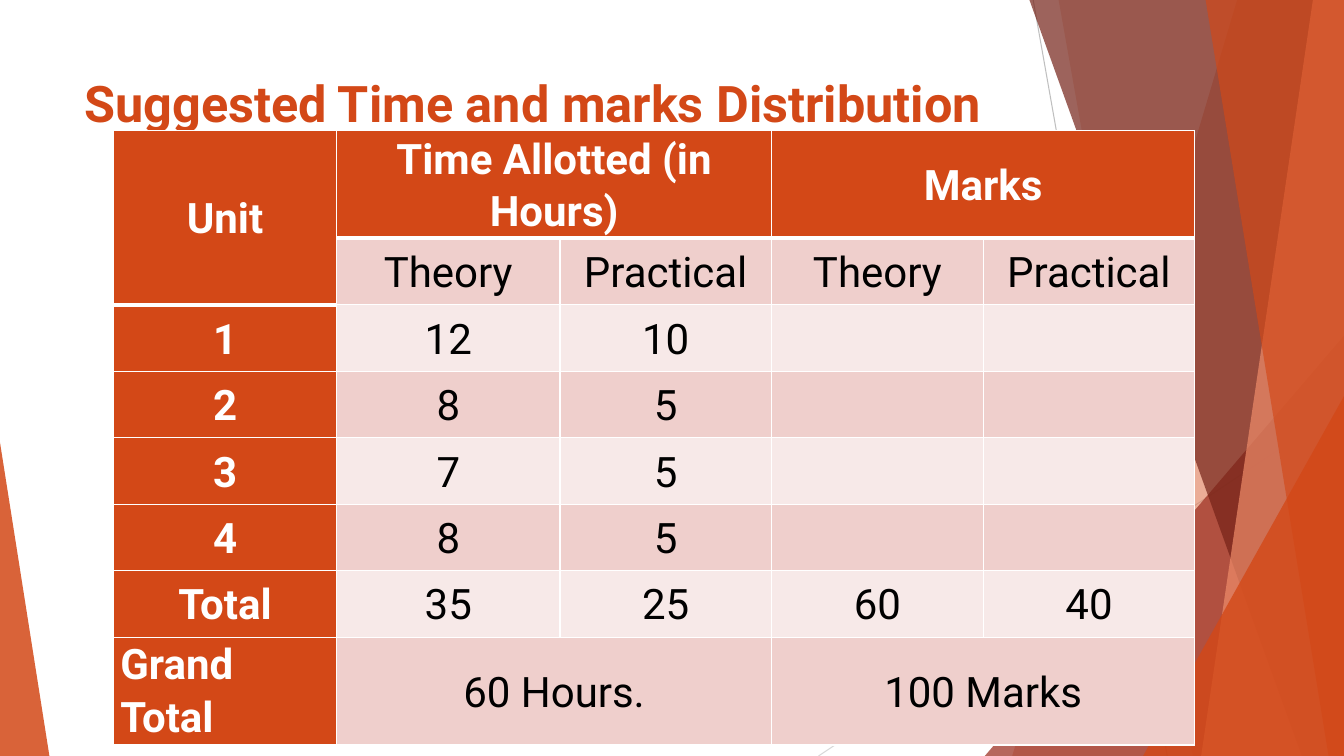
"""Build the slide with the suggested time and marks distribution table."""
from dataclasses import dataclass

from lxml import etree
from pptx import Presentation
from pptx.dml.color import RGBColor
from pptx.enum.shapes import MSO_CONNECTOR, MSO_SHAPE
from pptx.enum.text import MSO_ANCHOR, PP_ALIGN
from pptx.oxml.ns import qn
from pptx.util import Pt

STRAIGHT = MSO_CONNECTOR.STRAIGHT
TRIANGLE = MSO_SHAPE.ISOSCELES_TRIANGLE
TOP, MIDDLE = MSO_ANCHOR.TOP, MSO_ANCHOR.MIDDLE
LEFT, CENTER, JUSTIFY = PP_ALIGN.LEFT, PP_ALIGN.CENTER, PP_ALIGN.JUSTIFY


@dataclass(frozen=True)
class Theme:
    font: str = "Roboto"
    title_size: int = 36
    table_size: int = 30
    orange: str = "D34817"
    salmon: str = "EF8C6A"
    brick: str = "9B2D1F"
    maroon: str = "742217"
    band_dark: str = "EFCFCC"
    band_light: str = "F7E9E8"
    white: str = "FFFFFF"
    black: str = "000000"
    line_dark: str = "BFBFBF"
    line_light: str = "D9D9D9"


theme = Theme()
WIDTH, HEIGHT = 960, 540


def paint(shape, color, opacity):
    shape.shadow.inherit = False
    shape.line.fill.background()
    shape.fill.solid()
    shape.fill.fore_color.rgb = RGBColor.from_string(color)
    color_element = shape.fill._xPr.find(qn("a:solidFill"))[0]
    etree.SubElement(color_element, qn("a:alpha"), val=str(opacity * 1000))


def style_text(paragraph, size, color, bold, alignment):
    paragraph.alignment = alignment
    paragraph.font.name = theme.font
    paragraph.font.size = Pt(size)
    paragraph.font.bold = bold
    paragraph.font.color.rgb = RGBColor.from_string(color)


presentation = Presentation()
presentation.slide_width, presentation.slide_height = Pt(WIDTH), Pt(HEIGHT)
slide = presentation.slides.add_slide(presentation.slide_layouts[6])
shapes = slide.shapes

for start_x, start_y, end_x, color in (
    (738, 0, 833.76, theme.line_dark),
    (WIDTH, 290.16, 584.64, theme.line_light),
):
    connector = shapes.add_connector(STRAIGHT, Pt(start_x), Pt(start_y), Pt(end_x), Pt(HEIGHT))
    connector.line.color.rgb = RGBColor.from_string(color)
    connector.line.width = Pt(0.75)
    etree.SubElement(connector._element.spPr, qn("a:effectLst"))

decorations = (
    ("panel", (884.16, 722.88), theme.orange, 30),
    ("panel", (756, 851.76), theme.orange, 20),
    ("triangle", (703.44, 239.76, 256.56, 1), theme.brick, 72),
    ("panel", (735.12, 929.52), theme.maroon, 70),
    ("panel", (938.16, 858.24), theme.salmon, 70),
    ("panel", (861.12, 948.96), theme.orange, 65),
    ("triangle", (816.48, 282.96, 143.52, 1), theme.orange, 80),
    ("triangle", (0, 316.08, 35.28, 0), theme.orange, 85),
)
for kind, geometry, color, opacity in decorations:
    if kind == "panel":
        top_x, bottom_x = geometry
        builder = shapes.build_freeform(top_x, -0.6, scale=Pt(1))
        builder.add_line_segments([(WIDTH, -0.6), (WIDTH, HEIGHT), (bottom_x, HEIGHT)])
        shape = builder.convert_to_shape()
    else:
        left, top, width, apex = geometry
        shape = shapes.add_shape(TRIANGLE, Pt(left), Pt(top), Pt(width), Pt(HEIGHT - top))
        shape.adjustments[0] = apex
    paint(shape, color, opacity)

title = shapes.add_textbox(Pt(53.28), Pt(48.24), Pt(676.8), Pt(103.68))
title.text_frame.word_wrap = True
title.text_frame.vertical_anchor = TOP
title.text_frame.text = "Suggested Time and marks Distribution"
style_text(title.text_frame.paragraphs[0], theme.title_size, theme.orange, True, LEFT)

rows = (
    ("Unit", "Time Allotted (in Hours)", "", "Marks", ""),
    ("", "Theory", "Practical", "Theory", "Practical"),
    ("1", "12", "10", "", ""),
    ("2", "8", "5", "", ""),
    ("3", "7", "5", "", ""),
    ("4", "8", "5", "", ""),
    ("Total", "35", "25", "60", "40"),
    ("Grand Total", "60 Hours.", "", "100 Marks", ""),
)
column_widths = (159.5, 159.5, 151.2, 151.2, 151.2)
last_row = len(rows) - 1
row_heights = [75.2 if index in (0, last_row) else 47.5 for index in range(len(rows))]
table = shapes.add_table(
    len(rows), len(column_widths), Pt(81), Pt(93.2), Pt(sum(column_widths)), Pt(sum(row_heights))
).table
for column, width in zip(table.columns, column_widths):
    column.width = Pt(width)
for row, height in zip(table.rows, row_heights):
    row.height = Pt(height)

for row_index, row in enumerate(rows):
    for column_index, text in enumerate(row):
        cell = table.cell(row_index, column_index)
        header = row_index == 0 or column_index == 0
        band = theme.band_dark if row_index % 2 else theme.band_light
        cell.fill.solid()
        cell.fill.fore_color.rgb = RGBColor.from_string(theme.orange if header else band)
        cell.margin_left = cell.margin_right = Pt(5)
        cell.margin_top = cell.margin_bottom = Pt(0)
        grand_total = text == "Grand Total"
        cell.vertical_anchor = TOP if grand_total else MIDDLE
        cell.text = text
        paragraph = cell.text_frame.paragraphs[0]
        paragraph.line_spacing = 1.07
        style_text(paragraph, theme.table_size, theme.white if header else theme.black,
                   header, JUSTIFY if grand_total else CENTER)

        header_end = 1 if column_index == 0 else 0
        widths = {
            "lnL": 1,
            "lnR": 1,
            "lnT": 3 if row_index == header_end + 1 else 1,
            "lnB": 3 if row_index == header_end else 1,
        }
        for position, (side, width) in enumerate(widths.items()):
            border = etree.Element(qn(f"a:{side}"), w=str(Pt(width)))
            fill = etree.SubElement(border, qn("a:solidFill"))
            etree.SubElement(fill, qn("a:srgbClr"), val=theme.white)
            cell._tc.tcPr.insert(position, border)

table.cell(0, 0).merge(table.cell(1, 0))
for row_index in (0, last_row):
    for column_index in (1, 3):
        table.cell(row_index, column_index).merge(table.cell(row_index, column_index + 1))

presentation.save("out.pptx")
